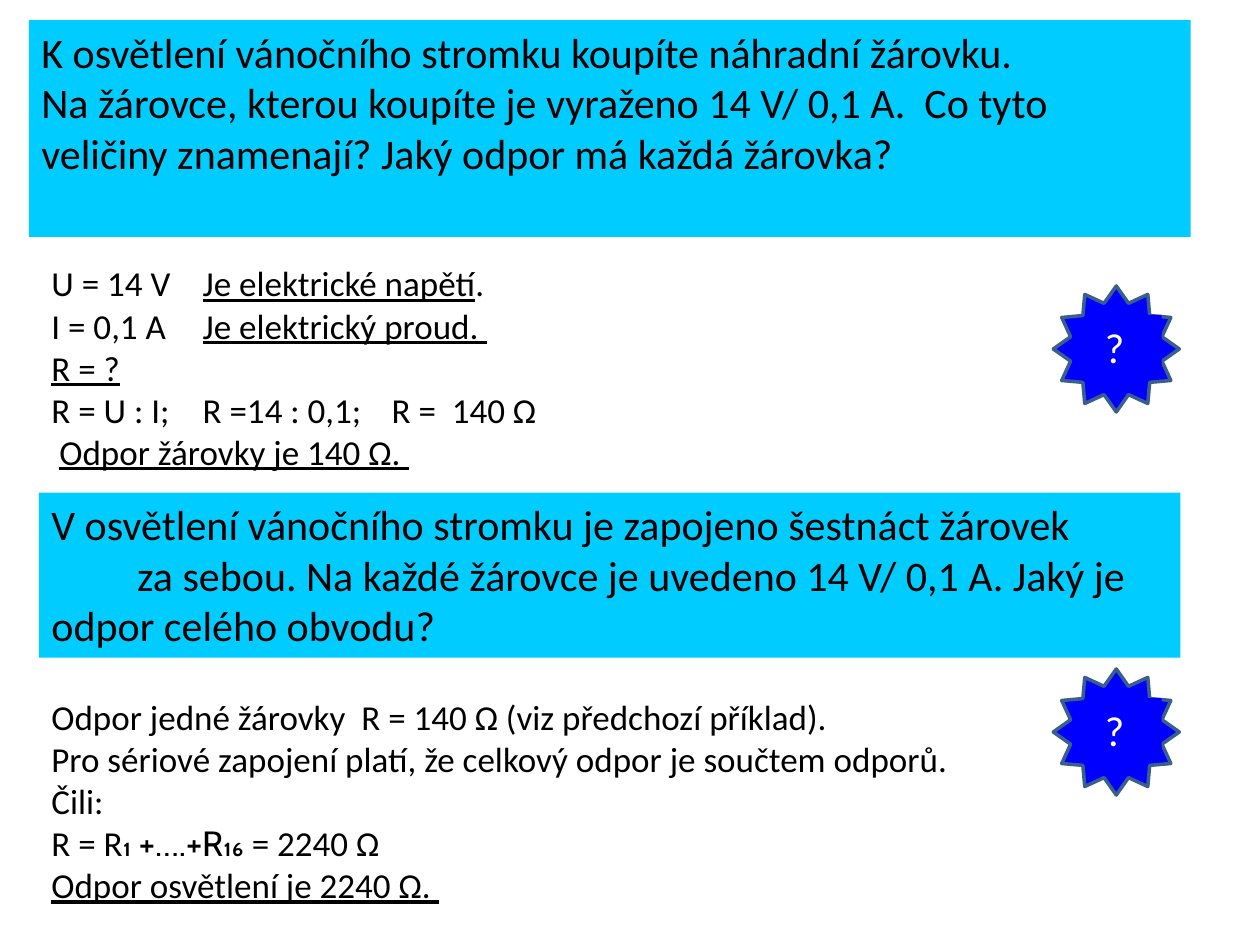
from lxml import etree
from pptx import Presentation
from pptx import util as u
from pptx.dml.color import RGBColor
from pptx.enum import shapes, text
from pptx.oxml.ns import qn

COLUMNS, ROWS = 10, 7.5
CELL = u.Inches(1)
FONT = "Calibri"
BLACK, WHITE, SKY, BLUE, STEEL = "000000", "FFFFFF", "00CCFF", "0000FF", "3A5F8C"

# Each line is a list of (text, underlined, font) runs.
BULB_QUESTION = [
    [("K osvětlení vánočního stromku koupíte náhradní žárovku.", False, FONT)],
    [("Na žárovce, kterou koupíte je vyraženo 14 V/ 0,1 A.  Co tyto veličiny "
      "znamenají? Jaký odpor má každá žárovka?", False, FONT)],
]
BULB_ANSWER = [
    [("U = 14 V\t", False, FONT), ("Je elektrické napětí", True, FONT), (".", False, FONT)],
    [("I = 0,1 A\t", False, FONT), ("Je elektrický proud. ", True, FONT)],
    [("R = ?", True, FONT)],
    [("R = U : I;\tR =14 : 0,1;\tR =  140 Ω", False, FONT)],
    [(" ", False, FONT), ("Odpor žárovky je 140 Ω. ", True, FONT)],
]
CIRCUIT_QUESTION = [
    [("V osvětlení vánočního stromku je zapojeno šestnáct žárovek\v"
      "\tza sebou. Na každé žárovce je uvedeno 14 V/ 0,1 A. Jaký je odpor "
      "celého obvodu?", False, FONT)],
]
CIRCUIT_ANSWER = [
    [("Odpor jedné žárovky  R = 140 Ω (viz předchozí příklad).", False, FONT)],
    [("Pro sériové zapojení platí, že celkový odpor je součtem odporů. Čili:", False, FONT)],
    [("R = R", False, FONT), ("₁ +….+R₁₆", False, "Cabin"), (" = 2240 Ω", False, FONT)],
    [("Odpor osvětlení je 2240 Ω. ", True, FONT)],
]


def color(value):
    return RGBColor.from_string(value)


def place(box):
    """Turn grid columns and rows into slide lengths."""
    return [int(length * CELL) for length in box]


def set_tabs(paragraph, stops):
    tab_list = etree.SubElement(paragraph._p.get_or_add_pPr(), qn("a:tabLst"))
    for stop in stops:
        etree.SubElement(tab_list, qn("a:tab"), pos=str(int(stop * CELL)), algn="l")


def write_lines(shape, lines, size, ink=BLACK, tabs=()):
    frame = shape.text_frame
    frame.word_wrap = True
    frame.auto_size = text.MSO_AUTO_SIZE.NONE
    frame.vertical_anchor = text.MSO_ANCHOR.TOP
    frame.text = "\n".join("" for _ in lines)
    for paragraph, runs in zip(frame.paragraphs, lines):
        paragraph.alignment = text.PP_ALIGN.LEFT
        if tabs:
            set_tabs(paragraph, tabs)
        for content, underlined, font in runs:
            for index, piece in enumerate(content.split("\v")):
                if index:
                    paragraph.add_line_break()
                run = paragraph.add_run()
                run.text = piece
                run.font.size = u.Pt(size)
                run.font.name = font
                run.font.underline = underlined
                run.font.color.rgb = color(ink)


def add_filled(owner, kind, box, fill, line=None):
    shape = owner.add_shape(kind, *place(box))
    shape.shadow.inherit = False
    shape.fill.solid()
    shape.fill.fore_color.rgb = color(fill)
    if line:
        shape.line.color.rgb = color(line)
        shape.line.width = u.Pt(2)
    else:
        shape.line.fill.background()
    return shape


def add_question(slide, box, lines, tabs=()):
    panel = add_filled(slide.shapes, shapes.MSO_SHAPE.RECTANGLE, box, SKY)
    write_lines(panel, lines, 24, tabs=tabs)


def add_answer(slide, box, lines, tabs=()):
    write_lines(slide.shapes.add_textbox(*place(box)), lines, 20, tabs=tabs)


def add_star(slide, box):
    left, top, width, height = box
    group = slide.shapes.add_group_shape().shapes
    add_filled(group, shapes.MSO_SHAPE.STAR_12_POINT, box, BLUE, STEEL)
    label_box = (left + 0.31 * width, top + 0.23 * height, 0.55 * width, 0.5 * height)
    label = add_filled(group, shapes.MSO_SHAPE.RECTANGLE, label_box, BLUE)
    write_lines(label, [[("?", False, FONT)]], 24, WHITE)


def main():
    presentation = Presentation()
    presentation.slide_width, presentation.slide_height = place((COLUMNS, ROWS))
    slide = presentation.slides.add_slide(presentation.slide_layouts[6])
    add_question(slide, (0.23, 0.16, 9.22, 1.72), BULB_QUESTION)
    add_question(slide, (0.31, 3.91, 9.06, 1.31), CIRCUIT_QUESTION, tabs=(0.68,))
    add_answer(slide, (0.31, 2.03, 7.81, 1.78), BULB_ANSWER, tabs=(1.2, 2.7))
    add_answer(slide, (0.31, 5.47, 7.5, 1.78), CIRCUIT_ANSWER)
    for top in (2.27, 5.31):
        add_star(slide, (8.36, top, 1, 1))
    presentation.save("out.pptx")


if __name__ == "__main__":
    main()
